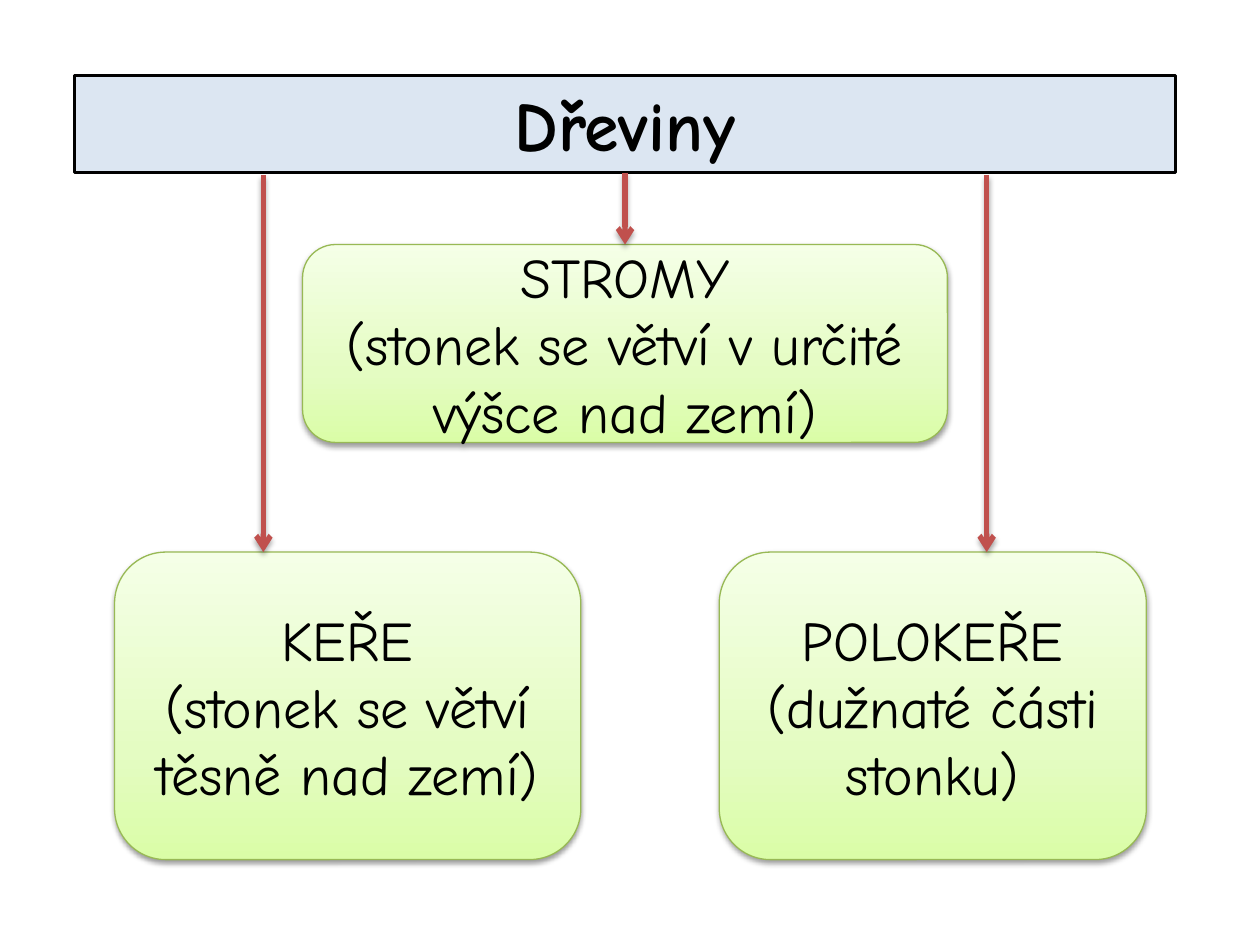
from pptx import Presentation
from pptx.dml.color import RGBColor
from pptx.enum.shapes import MSO_CONNECTOR, MSO_SHAPE
from pptx.enum.text import MSO_ANCHOR, MSO_AUTO_SIZE, PP_ALIGN
from pptx.oxml import parse_xml
from pptx.oxml.ns import nsdecls, qn
from pptx.util import Cm, Pt

FONT = "Comic Neue"
BLACK = RGBColor(0x00, 0x00, 0x00)
PALE_BLUE = RGBColor(0xDC, 0xE6, 0xF2)
LEAF_GREEN = RGBColor(0x98, 0xB9, 0x55)
RED = RGBColor(0xC0, 0x50, 0x4D)
GREEN_STOPS = (
    (0, RGBColor(0xDA, 0xFD, 0xA7)),
    (35, RGBColor(0xE4, 0xFC, 0xC2)),
    (100, RGBColor(0xF5, 0xFF, 0xE7)),
)

CENTRE = 12.6
BRANCH_OFFSET = 7.29
TITLE_TOP, TITLE_WIDTH, TITLE_HEIGHT = 1.52, 22.2, 1.96
TITLE_BOTTOM = TITLE_TOP + TITLE_HEIGHT
TREES_TOP, TREES_WIDTH = 4.93, 13
SHRUBS_TOP, SHRUBS_HEIGHT = 11.13, 6.2


def write_text(frame, *lines, size=32, bold=False, anchor=MSO_ANCHOR.MIDDLE):
    frame.word_wrap = True
    frame.vertical_anchor = anchor
    for index, line in enumerate(lines):
        paragraph = frame.add_paragraph() if index else frame.paragraphs[0]
        paragraph.alignment = PP_ALIGN.CENTER
        run = paragraph.add_run()
        run.text = line
        run.font.name = FONT
        run.font.size = Pt(size)
        run.font.bold = bold
        run.font.color.rgb = BLACK


def set_line(line, colour, width):
    line.color.rgb = colour
    line.width = Pt(width)


def add_shadow(element, distance, opacity):
    """Append a soft black shadow that falls straight down."""
    element.spPr.append(parse_xml(
        f'<a:effectLst {nsdecls("a")}>'
        f'<a:outerShdw blurRad="{Pt(3.1)}" dist="{Pt(distance)}" dir="5400000" rotWithShape="0">'
        f'<a:srgbClr val="{BLACK}"><a:alpha val="{opacity * 1000}"/></a:srgbClr>'
        '</a:outerShdw></a:effectLst>'))


def fill_green(shape):
    """Fill with the three-stop gradient, deepest green at the bottom."""
    shape.fill.gradient()
    shape.fill.gradient_angle = 90
    stops = shape._element.spPr.find(qn("a:gradFill")).find(qn("a:gsLst"))
    for stop in list(stops):
        stops.remove(stop)
    for position, colour in GREEN_STOPS:
        stops.append(parse_xml(
            f'<a:gs {nsdecls("a")} pos="{position * 1000}"><a:srgbClr val="{colour}"/></a:gs>'))


def add_title(slide, text):
    title = slide.shapes.add_textbox(
        Cm(CENTRE - TITLE_WIDTH / 2), Cm(TITLE_TOP), Cm(TITLE_WIDTH), Cm(TITLE_HEIGHT))
    title.fill.solid()
    title.fill.fore_color.rgb = PALE_BLUE
    set_line(title.line, BLACK, 2)
    write_text(title.text_frame, text, size=40, bold=True, anchor=MSO_ANCHOR.TOP)
    title.text_frame.auto_size = MSO_AUTO_SIZE.SHAPE_TO_FIT_TEXT


def add_plant_group(slide, left, top, width, height, name, description):
    group = slide.shapes.add_shape(
        MSO_SHAPE.ROUNDED_RECTANGLE, Cm(left), Cm(top), Cm(width), Cm(height))
    fill_green(group)
    set_line(group.line, LEAF_GREEN, 0.75)
    add_shadow(group._element, distance=1.6, opacity=38)
    write_text(group.text_frame, name, description)


def add_down_arrow(slide, x, top, bottom):
    arrow = slide.shapes.add_connector(
        MSO_CONNECTOR.STRAIGHT, Cm(x), Cm(top), Cm(x), Cm(bottom))
    set_line(arrow.line, RED, 3)
    arrow._element.spPr.find(qn("a:ln")).append(
        parse_xml(f'<a:tailEnd {nsdecls("a")} type="arrow"/>'))
    add_shadow(arrow._element, distance=1.8, opacity=35)


def main():
    presentation = Presentation()
    presentation.slide_width, presentation.slide_height = Cm(25.4), Cm(19.05)
    slide = presentation.slides.add_slide(presentation.slide_layouts[6])

    add_title(slide, "Dřeviny")
    add_plant_group(slide, 2.31, SHRUBS_TOP, 9.4, SHRUBS_HEIGHT,
                    "KEŘE", "(stonek se větví těsně nad zemí)")
    add_plant_group(slide, CENTRE - TREES_WIDTH / 2, TREES_TOP, TREES_WIDTH, 3.99,
                    "STROMY", "(stonek se větví v určité výšce nad zemí)")
    add_plant_group(slide, 14.5, SHRUBS_TOP, 8.61, SHRUBS_HEIGHT,
                    "POLOKEŘE", "(dužnaté části stonku)")

    add_down_arrow(slide, CENTRE, TITLE_BOTTOM, TREES_TOP)
    for x in (CENTRE - BRANCH_OFFSET, CENTRE + BRANCH_OFFSET):
        add_down_arrow(slide, x, TITLE_BOTTOM + 0.05, SHRUBS_TOP)

    presentation.save("out.pptx")


if __name__ == "__main__":
    main()
